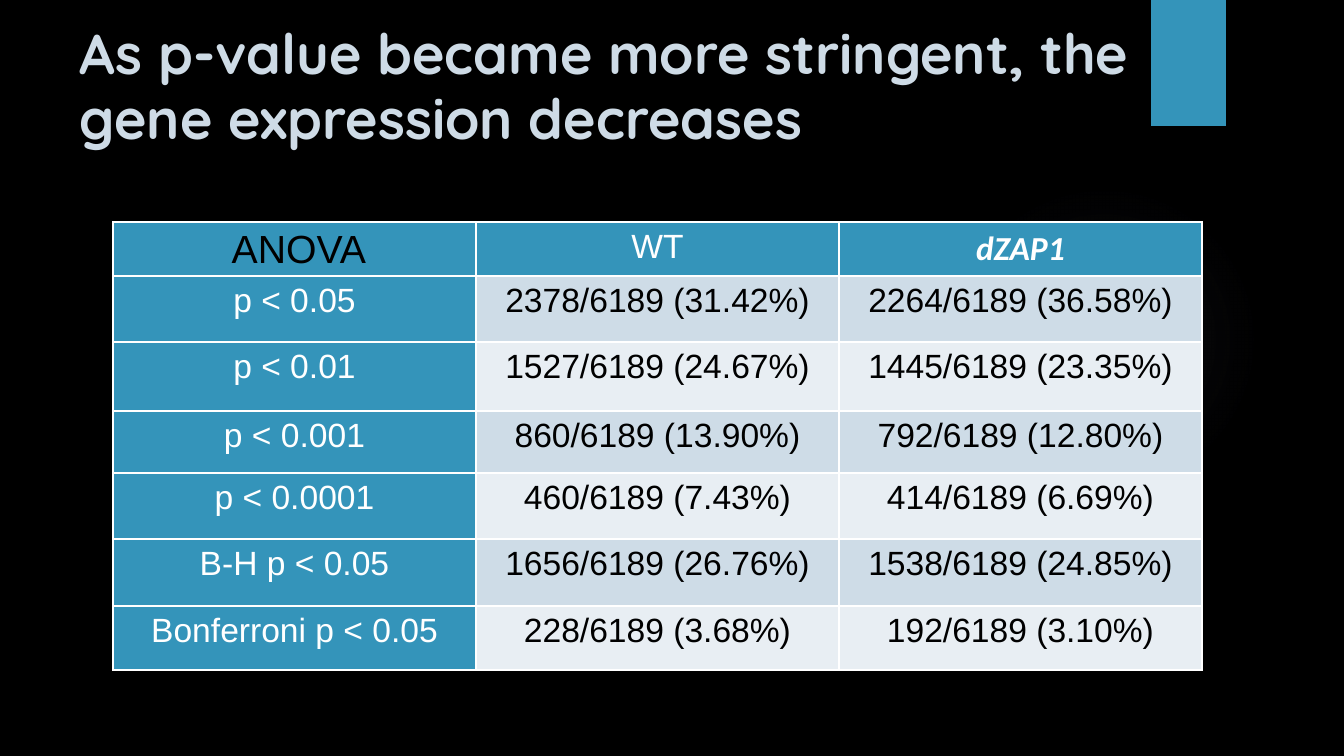
from lxml import etree
from pptx import Presentation
from pptx.dml.color import RGBColor
from pptx.enum.shapes import MSO_SHAPE
from pptx.enum.text import MSO_ANCHOR, PP_ALIGN
from pptx.oxml import parse_xml
from pptx.oxml.ns import nsdecls
from pptx.util import Pt

BLACK = RGBColor(0x00, 0x00, 0x00)
WHITE = RGBColor(0xFF, 0xFF, 0xFF)
TEAL = RGBColor(0x34, 0x94, 0xBA)
PALE = RGBColor(0xCE, 0xDB, 0xE6)
BANDS = [RGBColor(0xCE, 0xDC, 0xE7), RGBColor(0xE8, 0xEE, 0xF3)]
HAZE = RGBColor(0x7F, 0x7B, 0x9A)

SCALE = 914400 / 134.4  # EMU in one px
ROWS = [
    (" ANOVA", "WT", "dZAP1"),
    ("p < 0.05", "2378/6189 (31.42%)", "2264/6189 (36.58%)"),
    ("p < 0.01", "1527/6189 (24.67%)", "1445/6189 (23.35%)"),
    ("p < 0.001", "860/6189 (13.90%)", "792/6189 (12.80%)"),
    ("p < 0.0001", "460/6189 (7.43%)", "414/6189 (6.69%)"),
    ("B-H p < 0.05", "1656/6189 (26.76%)", "1538/6189 (24.85%)"),
    ("Bonferroni p < 0.05", "228/6189 (3.68%)", "192/6189 (3.10%)"),
]
HEIGHTS = [49, 66, 69, 62, 66, 67, 64]
SPECIAL = {
    (0, 0): dict(size=21, color=BLACK),
    (0, 2): dict(font="Calibri", bold=True, italic=True),
}


def px(*nums):
    return [round(n * SCALE) for n in nums]


def write(frame, text, size=18, font="Arial", color=WHITE, bold=False,
          italic=False, align=PP_ALIGN.LEFT, spacing=1.0):
    para = frame.paragraphs[0]
    para.alignment = align
    para.line_spacing = spacing
    run = para.add_run()
    run.text = text
    style = run.font
    style.size, style.name = Pt(size), font
    style.bold, style.italic = bold, italic
    style.color.rgb = color


class Page:
    def __init__(self, deck):
        self.slide = deck.slides.add_slide(deck.slide_layouts[6])
        fill = self.slide.background.fill
        fill.solid()
        fill.fore_color.rgb = BLACK

    def shape(self, kind, *box):
        item = self.slide.shapes.add_shape(kind, *px(*box))
        item.shadow.inherit = False
        item.line.fill.background()
        return item

    def block(self, color, *box):
        item = self.shape(MSO_SHAPE.RECTANGLE, *box)
        item.fill.solid()
        item.fill.fore_color.rgb = color

    def glow(self, color, stops, *box):
        item = self.shape(MSO_SHAPE.OVAL, *box)
        item.fill.gradient()
        grad = item.fill._xPr.find("{*}gradFill")
        marks = "".join(
            f'<a:gs pos="{pos * 1000}"><a:srgbClr val="{color}">'
            f'<a:alpha val="{alpha * 1000}"/></a:srgbClr></a:gs>'
            for pos, alpha in stops)
        new = parse_xml(
            f'<a:gradFill {nsdecls("a")}><a:gsLst>{marks}</a:gsLst>'
            '<a:path path="circle"><a:fillToRect l="50000" t="50000" '
            'r="50000" b="50000"/></a:path></a:gradFill>')
        grad.getparent().replace(grad, new)

    def text(self, words, *box, **style):
        frame = self.slide.shapes.add_textbox(*px(*box)).text_frame
        frame.word_wrap = True
        frame.vertical_anchor = MSO_ANCHOR.BOTTOM
        frame.margin_left, frame.margin_right = px(13, 13)
        frame.margin_top, frame.margin_bottom = px(13, 13)
        write(frame, words, **style)

    def edge(self, cell):
        props = cell._tc.get_or_add_tcPr()
        for side in "LRTB":
            line = parse_xml(
                f'<a:ln{side} {nsdecls("a")} w="{Pt(1)}"><a:solidFill>'
                f'<a:srgbClr val="{WHITE}"/></a:solidFill></a:ln{side}>')
            props.append(line)

    def cell(self, cell, words, fill, **style):
        cell.margin_left, cell.margin_right = px(9, 9)
        cell.margin_top = cell.margin_bottom = 0
        self.edge(cell)
        cell.fill.solid()
        cell.fill.fore_color.rgb = fill
        write(cell.text_frame, words, align=PP_ALIGN.CENTER,
              spacing=1.15, **style)

    def table(self, rows, heights, *box):
        grid = self.slide.shapes.add_table(
            len(rows), len(rows[0]), *px(*box, sum(heights))).table
        grid.first_row = grid.horz_banding = False
        for row, high in zip(grid.rows, heights):
            row.height = px(high)[0]
        for r, row in enumerate(rows):
            for c, words in enumerate(row):
                head = r == 0 or c == 0
                fill = TEAL if head else BANDS[(r - 1) % 2]
                style = {"color": WHITE if head else BLACK}
                style.update(SPECIAL.get((r, c), {}))
                self.cell(grid.cell(r, c), words, fill, **style)


def main():
    deck = Presentation()
    deck.slide_width, deck.slide_height = px(1344, 756)
    page = Page(deck)

    # Backdrop
    page.glow(HAZE, [(0, 7), (36, 6), (69, 0)], 949, 185, 310, 310)
    page.block(TEAL, 1151, 0, 75, 126)

    # Title
    page.text("As p-value became more stringent, the gene expression decreases",
              67, 39, 1210, 126, size=30, font="Quicksand", color=PALE,
              bold=True, spacing=0.96)

    # Results
    page.table(ROWS, HEIGHTS, 113, 222, 1089)
    deck.save("out.pptx")


if __name__ == "__main__":
    main()
